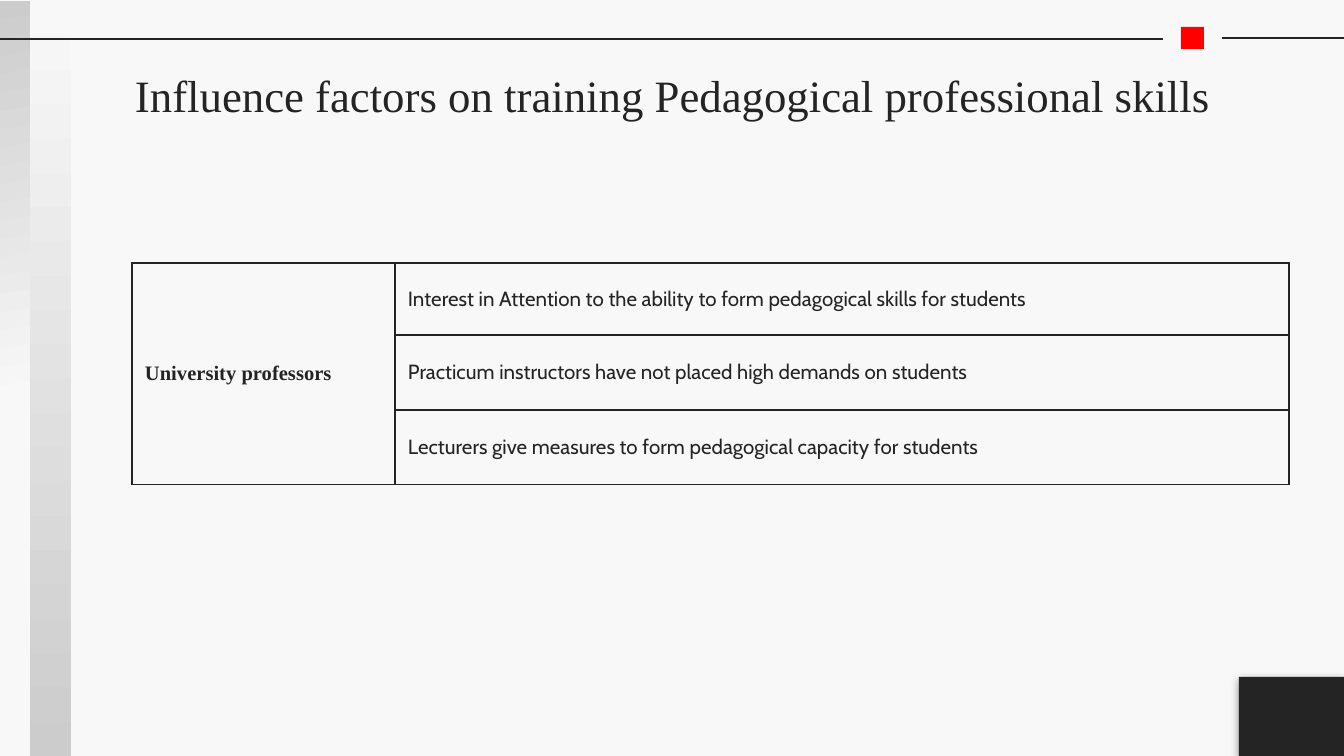
from lxml.etree import SubElement
from pptx import Presentation
from pptx.dml.color import RGBColor
from pptx.enum.shapes import MSO_CONNECTOR, MSO_SHAPE
from pptx.enum.text import MSO_ANCHOR, PP_ALIGN
from pptx.oxml import parse_xml
from pptx.oxml.ns import nsdecls, qn
from pptx.util import Pt

PX = 914400 / 134.4
THEME = {
    "background": "F8F8F8",
    "ink": "242424",
    "accent": "FF0000",
    "strip": "CCCCCC",
    "serif": "Times New Roman",
    "sans": "Cabin",
    "title_size": Pt(24),
    "table_size": Pt(11),
    "line_width": Pt(0.75),
}


def px(*lengths):
    return [round(length * PX) for length in lengths]


def add_box(box, color):
    shape = slide.shapes.add_shape(MSO_SHAPE.RECTANGLE, *px(*box))
    shape.shadow.inherit = False
    shape.line.fill.background()
    shape.fill.solid()
    shape.fill.fore_color.rgb = RGBColor.from_string(color)
    return shape


presentation = Presentation()
presentation.slide_width, presentation.slide_height = px(1344, 756)
slide = presentation.slides.add_slide(presentation.slide_layouts[6])
slide.background.fill.solid()
slide.background.fill.fore_color.rgb = RGBColor.from_string(THEME["background"])
ink = RGBColor.from_string(THEME["ink"])

light, dark = THEME["background"], THEME["strip"]
strips = [
    ((29, 1, 42, 755), [(0, light), (100, dark)], 90, False),
    ((0, 1, 30, 755), [(0, light), (47, light), (100, dark)], 280, True),
]
for box, stops, angle, flipped in strips:
    strip = add_box(box, light)
    properties = strip._element.spPr
    if flipped:
        properties.find(qn("a:xfrm")).set("flipH", "1")
    stop_xml = "".join(
        f'<a:gs pos="{position * 1000}"><a:srgbClr val="{color}"/></a:gs>'
        for position, color in stops
    )
    gradient = parse_xml(
        f'<a:gradFill {nsdecls("a")} rotWithShape="1"><a:gsLst>{stop_xml}</a:gsLst>'
        f'<a:lin ang="{angle * 60000}" scaled="0"/></a:gradFill>'
    )
    properties.replace(properties.find(qn("a:solidFill")), gradient)

for left, right, y in [(0, 1163, 39), (1222, 1344, 38)]:
    rule = slide.shapes.add_connector(MSO_CONNECTOR.STRAIGHT, *px(left, y, right, y))
    rule.line.color.rgb = ink
    rule.line.width = THEME["line_width"]
    SubElement(rule._element.spPr, qn("a:effectLst"))

add_box((1181, 27, 23, 22), THEME["accent"])

corner = add_box((1239, 677, 105, 79), THEME["ink"])
corner._element.spPr.find(qn("a:effectLst")).append(parse_xml(
    f'<a:outerShdw {nsdecls("a")} blurRad="{Pt(4.5)}" dist="{Pt(1.5)}" dir="5400000" '
    f'algn="ctr" rotWithShape="0"><a:srgbClr val="{THEME["ink"]}">'
    '<a:alpha val="50000"/></a:srgbClr></a:outerShdw>'
))

title = slide.shapes.add_textbox(*px(106, 50, 1133, 84))
frame = title.text_frame
frame.word_wrap = True
frame.vertical_anchor = MSO_ANCHOR.BOTTOM
frame.margin_left, frame.margin_top, frame.margin_right, frame.margin_bottom = px(13, 13, 13, 13)
paragraph = frame.paragraphs[0]
paragraph.text = "Influence factors on training Pedagogical professional skills"
paragraph.alignment = PP_ALIGN.CENTER
paragraph.font.name = THEME["serif"]
paragraph.font.size = THEME["title_size"]
paragraph.font.color.rgb = ink

group = "University professors"
factors = [
    "Interest in Attention to the ability to form pedagogical skills for students",
    "Practicum instructors have not placed high demands on students",
    "Lecturers give measures to form pedagogical capacity for students",
]
table = slide.shapes.add_table(len(factors), 2, *px(132, 263, 1157, 222)).table
table.first_row = table.horz_banding = False
for column, width in zip(table.columns, px(263, 894)):
    column.width = width
for row, height in zip(table.rows, px(72, 75, 75)):
    row.height = height
table.cell(0, 0).merge(table.cell(len(factors) - 1, 0))
table.cell(0, 0).text = group
for index, factor in enumerate(factors):
    table.cell(index, 1).text = factor

for row in table.rows:
    for index, cell in enumerate(row.cells):
        cell.vertical_anchor = MSO_ANCHOR.MIDDLE
        cell.margin_left, cell.margin_top, cell.margin_right, cell.margin_bottom = px(13, 0, 13, 0)
        paragraph = cell.text_frame.paragraphs[0]
        paragraph.font.name = THEME["sans"] if index else THEME["serif"]
        paragraph.font.size = THEME["table_size"]
        paragraph.font.bold = index == 0
        paragraph.font.color.rgb = ink
        if index:
            paragraph.space_after = Pt(16)
        cell_properties = cell._tc.get_or_add_tcPr()
        for side in ("lnL", "lnR", "lnT", "lnB"):
            border = SubElement(cell_properties, qn(f"a:{side}"), w=str(THEME["line_width"]))
            border_fill = SubElement(border, qn("a:solidFill"))
            SubElement(border_fill, qn("a:srgbClr"), val=THEME["ink"])
        cell.fill.background()

presentation.save("out.pptx")
